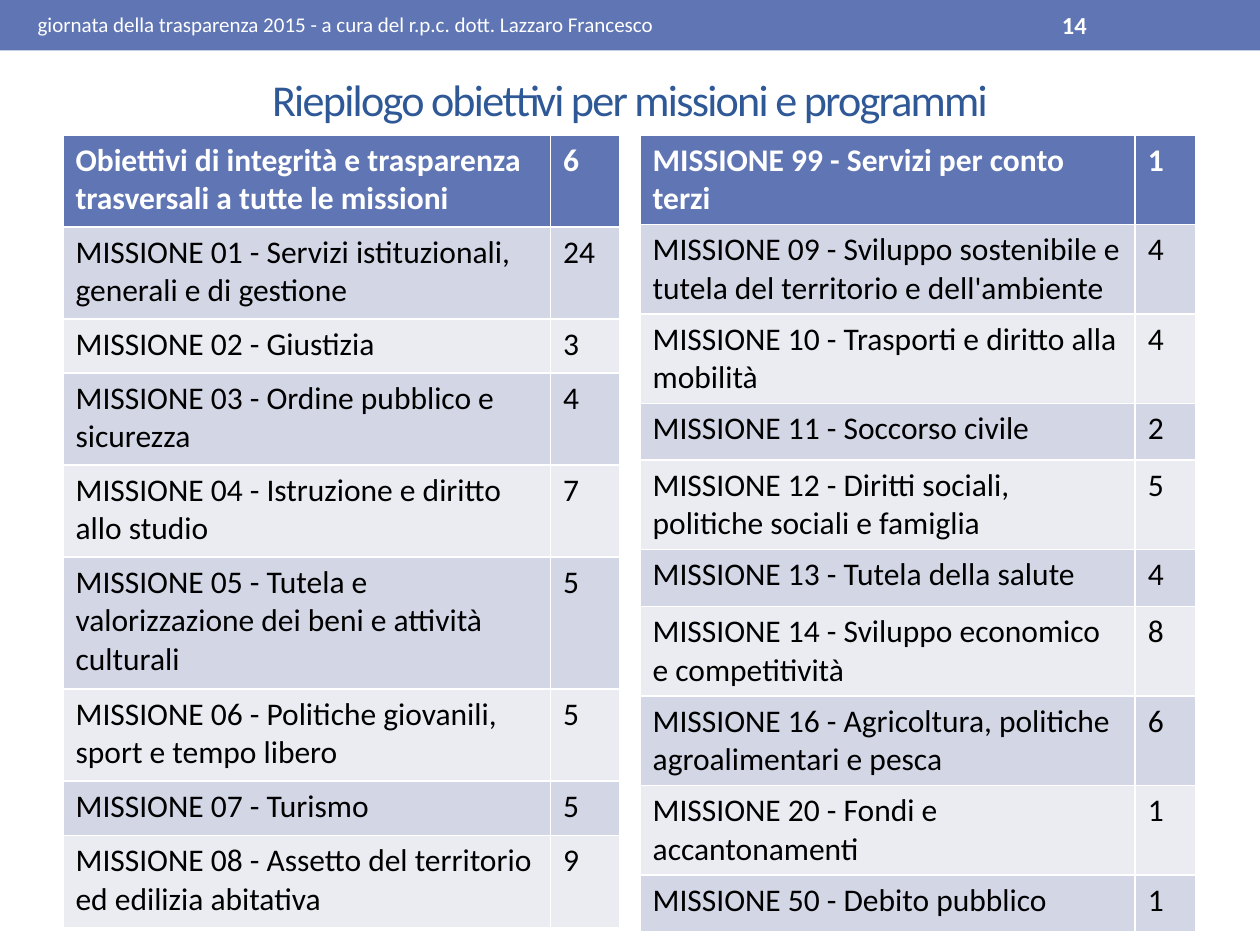
from dataclasses import dataclass

from pptx import Presentation
from pptx.dml.color import RGBColor
from pptx.enum import shapes, text
from pptx.util import Inches, Pt


@dataclass(frozen=True)
class Theme:
    """Colours, font and type sizes."""
    font: str = "Calibri"
    blue: str = "6076B4"
    navy: str = "2F5897"
    white: str = "FFFFFF"
    black: str = "000000"
    bands: tuple = ("EAECF2", "D2D6E5")
    title: float = 25.2
    body: float = 18
    page: float = 14
    note: float = 12


@dataclass(frozen=True)
class Goal:
    """One mission with its count of goals and its row height."""
    name: str
    count: int
    high: float


@dataclass(frozen=True)
class Grid:
    """A table of goals with its place and column widths."""
    left: float
    cols: tuple
    goals: tuple


T = Theme()
TOP = 1.07

GRIDS = (
    Grid(0.5, (3.87, 0.55), (
        Goal("Obiettivi di integrità e trasparenza trasversali a tutte le missioni", 6, 0.73),
        Goal("MISSIONE 01 - Servizi istituzionali, generali e di gestione", 24, 0.73),
        Goal("MISSIONE 02 - Giustizia", 3, 0.43),
        Goal("MISSIONE 03 - Ordine pubblico e sicurezza", 4, 0.73),
        Goal("MISSIONE 04 - Istruzione e diritto allo studio", 7, 0.73),
        Goal("MISSIONE 05 - Tutela e valorizzazione dei beni e attività culturali", 5, 1.05),
        Goal("MISSIONE 06 - Politiche giovanili, sport e tempo libero", 5, 0.73),
        Goal("MISSIONE 07 - Turismo", 5, 0.43),
        Goal("MISSIONE 08 - Assetto del territorio ed edilizia abitativa", 9, 0.73),
    )),
    Grid(5.08, (3.93, 0.48), (
        Goal("MISSIONE 99 - Servizi per conto terzi", 1, 0.71),
        Goal("MISSIONE 09 - Sviluppo sostenibile e tutela del territorio e dell'ambiente", 4, 0.71),
        Goal("MISSIONE 10 - Trasporti e diritto alla mobilità", 4, 0.71),
        Goal("MISSIONE 11 - Soccorso civile", 2, 0.45),
        Goal("MISSIONE 12 - Diritti sociali, politiche sociali e famiglia", 5, 0.71),
        Goal("MISSIONE 13 - Tutela della salute", 4, 0.45),
        Goal("MISSIONE 14 - Sviluppo economico e competitività", 8, 0.71),
        Goal("MISSIONE 16 - Agricoltura, politiche agroalimentari e pesca", 6, 0.71),
        Goal("MISSIONE 20 - Fondi e accantonamenti", 1, 0.71),
        Goal("MISSIONE 50 - Debito pubblico", 1, 0.45),
    )),
)


def paint(item, tone: str) -> None:
    """Fill a shape or cell with one colour."""
    item.fill.solid()
    item.fill.fore_color.rgb = RGBColor.from_string(tone)


def write(frame, words: str, *, size: float, tone: str, bold: bool = False,
          align=None, space: int | None = None) -> None:
    """Put formatted words into a text frame."""
    frame.word_wrap = True
    para = frame.paragraphs[0]
    para.alignment = align
    run = para.add_run()
    run.text = words
    font = run.font
    font.name, font.size, font.bold = T.font, Pt(size), bold
    font.color.rgb = RGBColor.from_string(tone)
    if space is not None:
        run._r.get_or_add_rPr().set("spc", str(space))


def label(slide, box: tuple, words: str, **style) -> None:
    """Add a text box centred on its height."""
    frame = slide.shapes.add_textbox(*map(Inches, box)).text_frame
    frame.vertical_anchor = text.MSO_ANCHOR.MIDDLE
    write(frame, words, **style)


def banner(slide) -> None:
    """Draw the bar across the top."""
    bar = slide.shapes.add_shape(shapes.MSO_SHAPE.RECTANGLE, 0, 0, Inches(10), Inches(0.4))
    bar.shadow.inherit = False
    bar.line.fill.background()
    paint(bar, T.blue)


def head(slide, words: str) -> None:
    """Place and write the slide title."""
    title = slide.shapes.title
    title.left, title.top, title.width, title.height = map(Inches, (0.5, 0.58, 9, 0.41))
    title.text_frame.vertical_anchor = text.MSO_ANCHOR.MIDDLE
    write(title.text_frame, words, size=T.title, tone=T.navy,
          align=text.PP_ALIGN.CENTER, space=-100)


def draw(slide, grid: Grid) -> None:
    """Draw one table of goals."""
    size = sum(grid.cols), sum(goal.high for goal in grid.goals)
    table = slide.shapes.add_table(len(grid.goals), len(grid.cols),
                                   *map(Inches, (grid.left, TOP, *size))).table
    for col, wide in zip(table.columns, grid.cols):
        col.width = Inches(wide)
    for num, (row, goal) in enumerate(zip(table.rows, grid.goals)):
        row.height = Inches(goal.high)
        first = num == 0
        for cell, words in zip(row.cells, (goal.name, str(goal.count))):
            paint(cell, T.blue if first else T.bands[num % 2])
            write(cell.text_frame, words, size=T.body, bold=first,
                  tone=T.white if first else T.black)


def main() -> None:
    """Build and save the slide."""
    deck = Presentation()
    deck.slide_width, deck.slide_height = Inches(10), Inches(7.5)
    slide = deck.slides.add_slide(deck.slide_layouts[5])
    banner(slide)
    head(slide, "Riepilogo obiettivi per missioni e programmi")
    for grid in GRIDS:
        draw(slide, grid)
    label(slide, (0.2, 0.02, 8.05, 0.34),
          "giornata della trasparenza 2015 - a cura del r.p.c. dott. Lazzaro Francesco",
          size=T.note, tone=T.white)
    label(slide, (8.33, 0.02, 1.17, 0.36), "14", size=T.page, tone=T.white, bold=True)
    deck.save("out.pptx")


if __name__ == "__main__":
    main()
